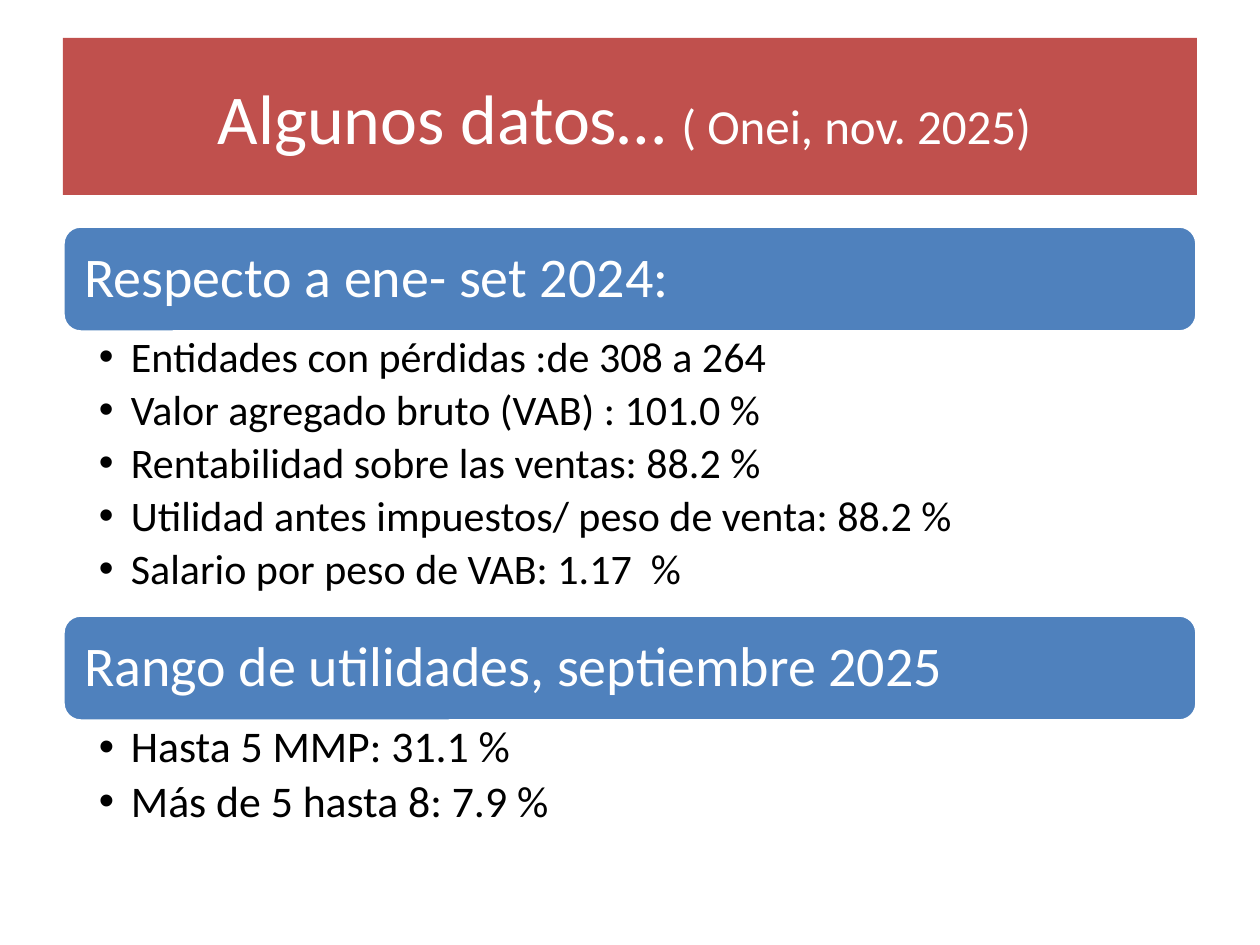
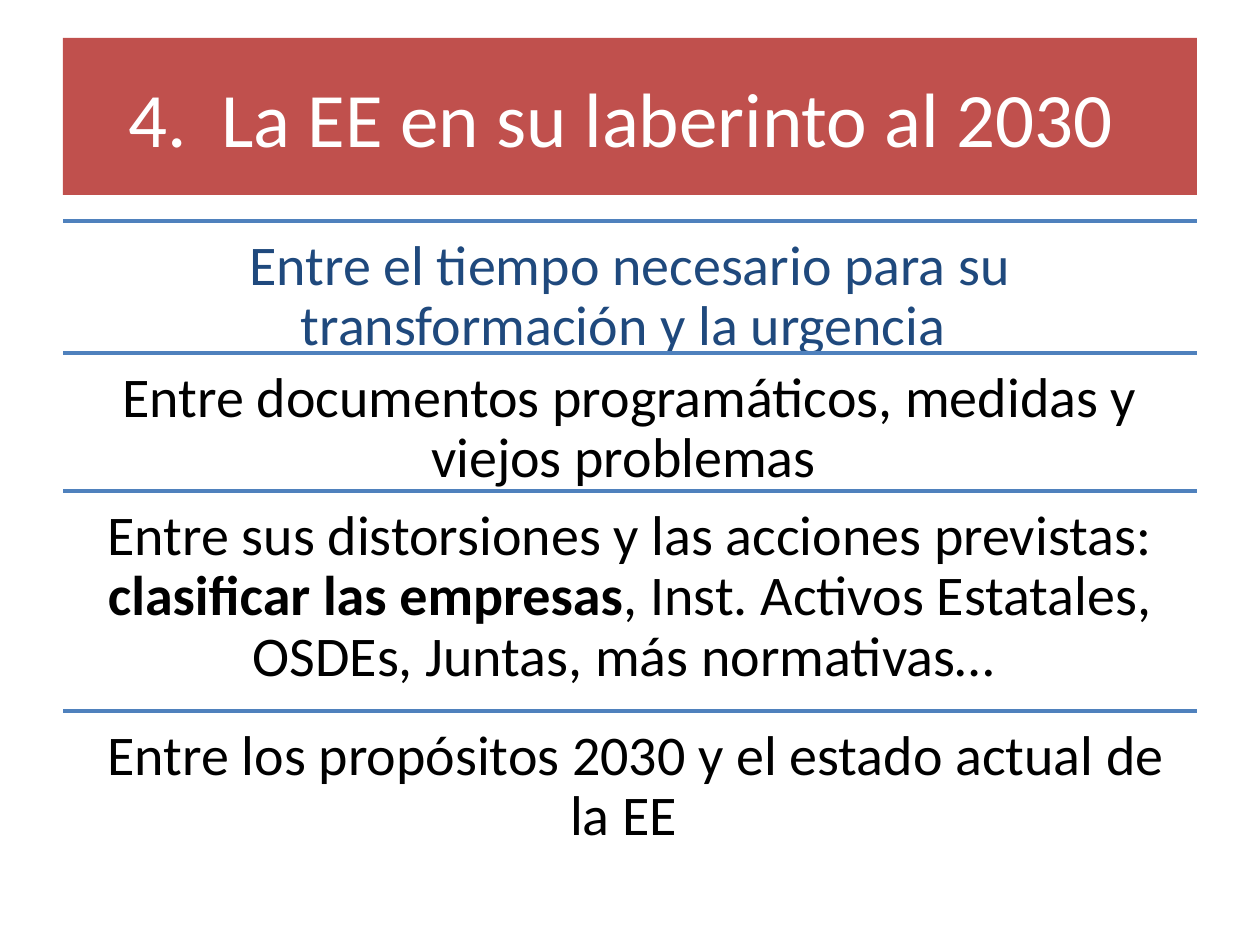
from lxml.etree import SubElement
from pptx import Presentation
from pptx.dml.color import RGBColor
from pptx.enum.shapes import MSO_CONNECTOR, MSO_SHAPE
from pptx.enum.text import MSO_ANCHOR, PP_ALIGN
from pptx.oxml.ns import qn
from pptx.util import Emu, Pt

COLOURS = {"band": "C0504D", "accent": "4F81BD", "navy": "1F497D",
           "white": "FFFFFF", "black": "000000"}
FONT = "Calibri"
LEFT, WIDTH = 63, 1134
PAD = 16
HEADING_HEIGHT = 106

SECTIONS = [
    ("Respecto a ene- set 2024:", 24, 283, [
        "Entidades con pérdidas :de 308 a 264",
        "Valor agregado bruto (VAB) : 101.0 %",
        "Rentabilidad sobre las ventas: 88.2 %",
        "Utilidad antes impuestos/ peso de venta: 88.2 %",
        "Salario por peso de VAB: 1.17  %",
    ]),
    ("Rango de utilidades, septiembre 2025", 25, 118, [
        "Hasta 5 MMP: 31.1 %",
        "Más de 5 hasta 8: 7.9 %",
    ]),
]

DILEMMAS = [
    (132, "navy", [("Entre el tiempo necesario para su transformación y la urgencia ", {})]),
    (138, "black", [("Entre documentos programáticos, medidas y viejos problemas ", {})]),
    (220, "black", [
        ("Entre sus distorsiones y las acciones previstas: ", {}),
        ("clasificar las empresas", {"bold": True}),
        (", Inst. Activos Estatales, OSDEs, Juntas, más normativas… ", {}),
    ]),
    (132, "black", [(" Entre los propósitos 2030 y el estado actual de la EE ", {})]),
]


def px(length):
    """Turn whole pixels into EMU."""
    return Emu(round(length * 914400 / 126))


def colour(key):
    """Look up a colour of the palette."""
    return RGBColor.from_string(COLOURS[key])


def add_bullet(paragraph, indent):
    """Give a paragraph a hanging round bullet."""
    paragraph.level = 1
    properties = paragraph._p.get_or_add_pPr()
    properties.set("marL", str(px(indent)))
    properties.set("indent", str(-px(indent)))
    SubElement(properties, qn("a:buFont")).set("typeface", "Arial")
    SubElement(properties, qn("a:buChar")).set("char", "•")


def write_text(holder, paragraphs, size=32, color="black", align=PP_ALIGN.LEFT,
               anchor=MSO_ANCHOR.TOP, insets=(PAD, PAD, PAD, PAD),
               line_spacing=0.9, space_after=0, bullet_indent=0):
    """Fill a shape with paragraphs, each a list of (text, format) runs."""
    frame = holder.text_frame
    frame.word_wrap = True
    frame.vertical_anchor = anchor
    (frame.margin_left, frame.margin_top,
     frame.margin_right, frame.margin_bottom) = map(px, insets)
    for index, runs in enumerate(paragraphs):
        paragraph = frame.add_paragraph() if index else frame.paragraphs[0]
        if bullet_indent:
            add_bullet(paragraph, bullet_indent)
        paragraph.alignment = align
        paragraph.line_spacing = line_spacing
        paragraph.space_after = Pt(space_after)
        for text, style in runs:
            run = paragraph.add_run()
            run.text = text
            run.font.name = FONT
            run.font.size = Pt(style.get("size", size))
            run.font.bold = style.get("bold", False)
            run.font.color.rgb = colour(color)


def add_panel(slide, preset, top, height, fill, outline=None):
    """Add a filled full-width shape."""
    panel = slide.shapes.add_shape(preset, px(LEFT), px(top), px(WIDTH), px(height))
    panel.shadow.inherit = False
    panel.fill.solid()
    panel.fill.fore_color.rgb = colour(fill)
    if outline:
        panel.line.color.rgb = colour(outline)
        panel.line.width = Pt(2)
    else:
        panel.line.fill.background()
    return panel


def add_title(slide, runs, size):
    """Add the red title band shared by the slides."""
    band = add_panel(slide, MSO_SHAPE.RECTANGLE, 38, 157, "band")
    write_text(band, [runs], size=size, color="white", align=PP_ALIGN.CENTER,
               anchor=MSO_ANCHOR.MIDDLE, insets=(13, 6, 13, 6), line_spacing=1)


def add_body(slide, top, height, paragraphs, **text_format):
    """Add a full-width block of body text."""
    body = slide.shapes.add_textbox(px(LEFT), px(top), px(WIDTH), px(height))
    write_text(body, paragraphs, **text_format)


def add_heading(slide, top, heading):
    """Add a rounded blue section heading."""
    bar = add_panel(slide, MSO_SHAPE.ROUNDED_RECTANGLE, top, HEADING_HEIGHT,
                    "accent", outline="white")
    write_text(bar, [[(heading, {})]], color="white", anchor=MSO_ANCHOR.MIDDLE)


def add_rule(slide, top):
    """Add a thin blue rule across the slide."""
    rule = slide.shapes.add_connector(MSO_CONNECTOR.STRAIGHT, px(LEFT), px(top),
                                      px(LEFT + WIDTH), px(top))
    rule.line.color.rgb = colour("accent")
    rule.line.width = Pt(2)
    SubElement(rule._element.spPr, qn("a:effectLst"))


def build_data_slide(slide):
    """Lay out the headed lists of figures."""
    add_title(slide, [("Algunos datos… ", {}), ("( Onei, nov. 2025) ", {"size": 28})], 40)
    top = 226
    for heading, size, height, facts in SECTIONS:
        add_heading(slide, top, heading)
        top += HEADING_HEIGHT
        add_body(slide, top, height, [[(fact, {})] for fact in facts], size=size,
                 insets=(36, 4, 24, 4), space_after=4.4, bullet_indent=32)
        top += height


def build_labyrinth_slide(slide):
    """Lay out the dilemmas, each below a rule."""
    add_title(slide, [("4.  La EE en su laberinto al 2030 ", {})], 44)
    top = 221
    for height, color, dilemma in DILEMMAS:
        add_rule(slide, top)
        add_body(slide, top, height, [dilemma], color=color, align=PP_ALIGN.CENTER)
        top += height


def main():
    """Build and save the presentation."""
    presentation = Presentation()
    presentation.slide_width, presentation.slide_height = px(1260), px(945)
    blank = presentation.slide_layouts[6]
    for build in (build_data_slide, build_labyrinth_slide):
        build(presentation.slides.add_slide(blank))
    presentation.save("out.pptx")


if __name__ == "__main__":
    main()
